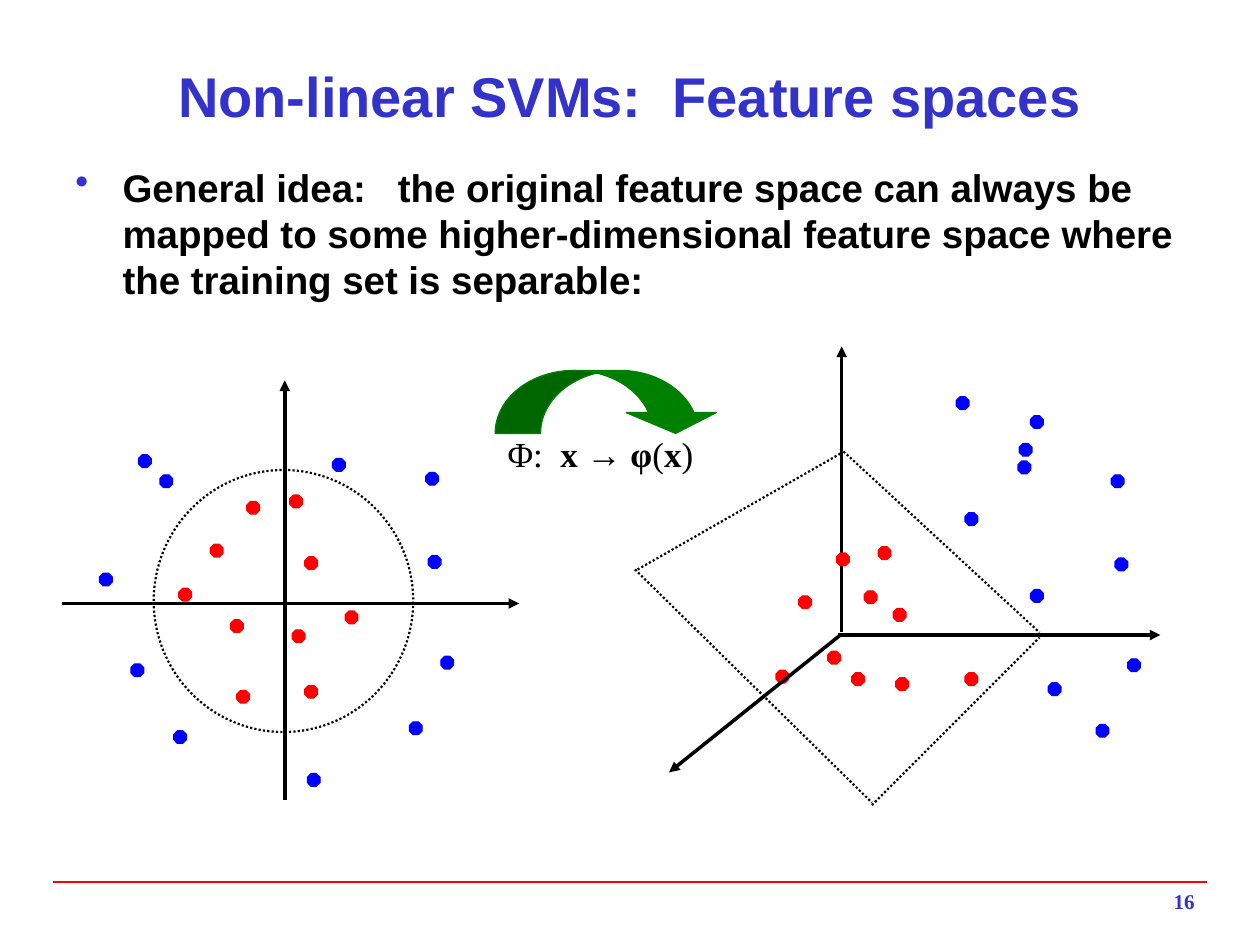
from dataclasses import dataclass

import pptx
import pptx.dml.color
import pptx.enum.dml
import pptx.enum.shapes
import pptx.enum.text
import pptx.oxml
import pptx.util
from lxml import etree

SHAPE = pptx.enum.shapes.MSO_SHAPE
ALIGN = pptx.enum.text.PP_ALIGN
ANCHOR = pptx.enum.text.MSO_ANCHOR
DASH = pptx.enum.dml.MSO_LINE
BLACK, RED, BLUE, INDIGO, GREEN = "000000", "FF0000", "0000FF", "3333CC", "008000"
UNIT = 2.54  # centimetres per layout unit; the slide is 10 by 7.5 units
DOT_SIZE = 0.1


@dataclass
class Stroke:
    start: tuple[float, float]
    end: tuple[float, float]
    color: str = BLACK
    width: float = 2
    dotted: bool = False
    arrow: bool = False


@dataclass
class Label:
    area: tuple[float, float, float, float]
    spans: list[tuple[str, bool]]
    size: float
    font: str = "Arial"
    color: str = BLACK
    align: ALIGN = ALIGN.LEFT
    anchor: ANCHOR = ANCHOR.TOP
    bullet: str = ""


def length(units: float) -> pptx.util.Length:
    return pptx.util.Cm(units * UNIT)


def rgb(value: str) -> pptx.dml.color.RGBColor:
    return pptx.dml.color.RGBColor.from_string(value)


def apply(target, values: dict) -> None:
    for name, value in values.items():
        setattr(target, name, value)


def add_child(parent, tag: str, **attributes: str):
    return etree.SubElement(parent, pptx.oxml.ns.qn(tag), attributes)


def draw_stroke(page, stroke: Stroke) -> None:
    line = page.shapes.add_connector(
        pptx.enum.shapes.MSO_CONNECTOR.STRAIGHT,
        *map(length, stroke.start + stroke.end))
    line.line.color.rgb = rgb(stroke.color)
    line.line.width = pptx.util.Pt(stroke.width)
    if stroke.dotted:
        line.line.dash_style = DASH.ROUND_DOT
    if stroke.arrow:
        add_child(line.line._get_or_add_ln(), "a:tailEnd", type="triangle")
    add_child(line._element.spPr, "a:effectLst")


def draw_shape(page, kind: SHAPE, area: tuple, color: str,
               width: float = 0.75, filled: bool = True):
    shape = page.shapes.add_shape(kind, *map(length, area))
    shape.shadow.inherit = False
    if filled:
        shape.fill.solid()
        shape.fill.fore_color.rgb = rgb(color)
    else:
        shape.fill.background()
    shape.line.color.rgb = rgb(color)
    shape.line.width = pptx.util.Pt(width)
    return shape


def draw_dots(page, color: str, corners: list[tuple[float, float]]) -> None:
    for corner in corners:
        draw_shape(page, SHAPE.OCTAGON, corner + (DOT_SIZE, DOT_SIZE), color)


def draw_label(page, label: Label) -> None:
    box = page.shapes.add_textbox(*map(length, label.area))
    apply(box.text_frame, {"word_wrap": True, "vertical_anchor": label.anchor})
    para = box.text_frame.paragraphs[0]
    para.alignment = label.align
    if label.bullet:
        para.space_before = pptx.util.Pt(4.4)
        properties = para._p.get_or_add_pPr()
        indent = length(0.375)
        properties.set("marL", str(indent))
        properties.set("indent", str(-indent))
        bullet_color = add_child(properties, "a:buClr")
        add_child(bullet_color, "a:srgbClr", val=INDIGO)
        add_child(properties, "a:buChar", char=label.bullet)
    for text, bold in label.spans:
        span = para.add_run()
        span.text = text
        apply(span.font, {"name": label.font, "size": pptx.util.Pt(label.size),
                          "bold": bold})
        span.font.color.rgb = rgb(label.color)


# Left plot: points in the original plane
PLANE_AXES = [
    Stroke((2.26, 6.35), (2.26, 3.02), arrow=True),
    Stroke((0.49, 4.79), (4.12, 4.79), arrow=True),
]
PLANE_INNER = [(2.3, 3.93), (1.67, 4.32), (1.83, 4.92), (2.42, 5.44), (1.96, 3.98),
               (1.42, 4.67), (1.88, 5.48), (2.42, 4.42), (2.74, 4.85), (2.32, 5)]
PLANE_OUTER = [(3.4, 4.41), (3.25, 5.73), (0.79, 4.55), (2.44, 6.14), (3.5, 5.21),
               (1.38, 5.8), (1.04, 5.27), (1.1, 3.61), (2.64, 3.64), (1.27, 3.77),
               (3.38, 3.75)]

# Right plot: points in the mapped space
SPACE_AXES = [
    Stroke((6.68, 5.02), (6.68, 2.75), arrow=True),
    Stroke((6.65, 5.04), (9.21, 5.04), arrow=True),
]
SPACE_INNER = [(6.97, 4.34), (6.34, 4.73), (6.76, 5.34), (7.66, 5.34), (6.64, 4.39),
               (6.86, 4.69), (7.11, 5.38), (7.09, 4.83), (6.57, 5.17), (6.16, 5.32)]
SPACE_OUTER = [(8.85, 4.43), (8.7, 5.75), (8.18, 3.3), (8.18, 4.68), (8.95, 5.23),
               (7.66, 4.07), (8.32, 5.42), (8.09, 3.52), (8.08, 3.66), (7.59, 3.15),
               (8.82, 3.77)]
DEPTH_AXIS = Stroke((6.67, 5.04), (5.31, 6.13), arrow=True)
SEPARATING_PLANE = [
    Stroke(start, end, width=1.25, dotted=True)
    for start, end in [((6.67, 3.56), (8.25, 5.02)), ((6.92, 6.39), (8.25, 5.06)),
                       ((5.06, 4.52), (6.67, 3.6)), ((5.04, 4.52), (6.92, 6.37))]
]

TITLE = Label((0.5, 0.42, 9, 0.67), [("Non-linear SVMs:  Feature spaces", True)], 32,
              color=INDIGO, align=ALIGN.CENTER, anchor=ANCHOR.MIDDLE)
IDEA = Label((0.5, 1.25, 9, 5.42),
             [("General idea:   the original feature space can always be mapped to some "
               "higher-dimensional feature space where the training set is separable:",
               True)], 22, bullet="•")
MAPPING = Label((3.93, 3.38, 1.84, 0.43),
                [("Φ:  ", False), ("x → φ", True), ("(", False), ("x", True),
                 (")", False)], 20, font="Times New Roman")
PAGE_NUMBER = Label((7.5, 7, 2.08, 0.33), [("16", True)], 12, font="Times New Roman",
                    color=INDIGO, align=ALIGN.RIGHT)


def main() -> None:
    deck = pptx.Presentation()
    apply(deck, {"slide_width": length(10), "slide_height": length(7.5)})
    page = deck.slides.add_slide(deck.slide_layouts[6])

    # Footer rule and heading text
    draw_stroke(page, Stroke((0.42, 7), (9.58, 7), RED, 1))
    for label in (TITLE, IDEA):
        draw_label(page, label)

    # Both plots: axes first, points over them
    for axes, inner, outer in ((PLANE_AXES, PLANE_INNER, PLANE_OUTER),
                               (SPACE_AXES, SPACE_INNER, SPACE_OUTER)):
        for axis in axes:
            draw_stroke(page, axis)
        draw_dots(page, RED, inner)
        draw_dots(page, BLUE, outer)

    # Class boundaries
    circle = draw_shape(page, SHAPE.OVAL, (1.22, 3.73, 2.06, 2.08), BLACK, 1.25, False)
    circle.line.dash_style = DASH.ROUND_DOT
    for stroke in [DEPTH_AXIS, *SEPARATING_PLANE]:
        draw_stroke(page, stroke)

    # Mapping arrow with its formula, page number
    arrow = draw_shape(page, SHAPE.CURVED_DOWN_ARROW, (3.93, 2.94, 1.79, 0.5), GREEN)
    for index, value in enumerate((0.72, 1.43, 0.33)):
        arrow.adjustments[index] = value
    for label in (MAPPING, PAGE_NUMBER):
        draw_label(page, label)

    deck.save("out.pptx")


if __name__ == "__main__":
    main()
